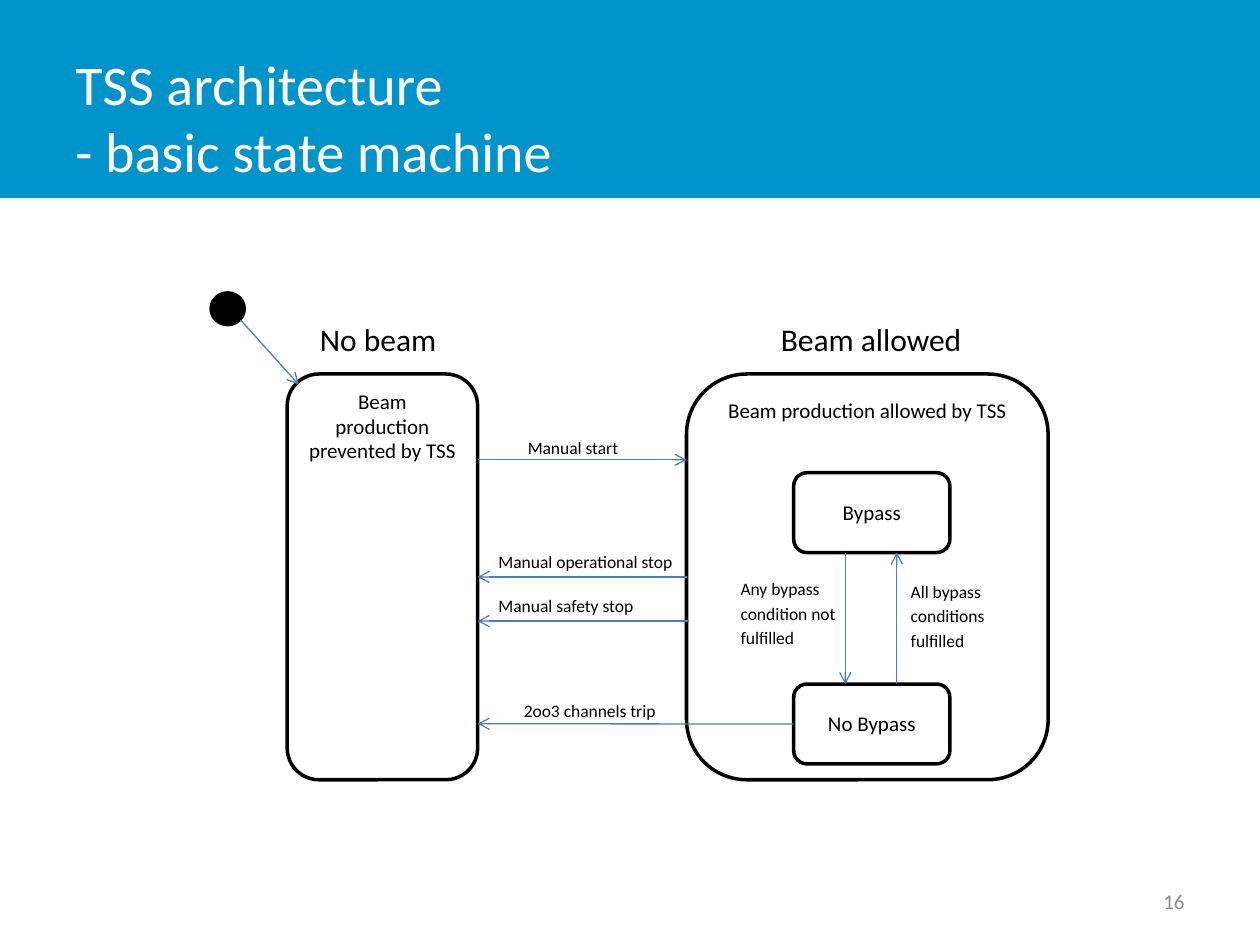
"""Build the TSS state machine slide."""
from lxml import etree
from pptx import Presentation
from pptx import util as u
from pptx.dml.color import RGBColor
from pptx.enum import shapes, text
from pptx.oxml.ns import qn

cm = u.Cm
hue = RGBColor.from_string
kind = shapes.MSO_SHAPE
mid = text.MSO_ANCHOR.MIDDLE
top = text.MSO_ANCHOR.TOP
left = text.PP_ALIGN.LEFT
center = text.PP_ALIGN.CENTER


def write(shape, words, size, color="000000", align=left, anchor=top, lead=None):
    frame = shape.text_frame
    frame.text = words
    frame.vertical_anchor = anchor
    para = frame.paragraphs[0]
    para.alignment = align
    if lead:
        para.line_spacing = u.Pt(lead)
        para.space_after = u.Pt(12)
    for run in para.runs:
        run.font.name = "Calibri"
        run.font.size = u.Pt(size)
        run.font.color.rgb = hue(color)


def draw(form, place, fill=None):
    shape = slide.shapes.add_shape(form, *map(cm, place))
    shape.shadow.inherit = False
    if fill:
        shape.fill.solid()
        shape.fill.fore_color.rgb = hue(fill)
        shape.line.fill.background()
    else:
        shape.fill.background()
        shape.line.color.rgb = hue("000000")
        shape.line.width = u.Pt(2)
    return shape


deck = Presentation()
deck.slide_width, deck.slide_height = cm(25.4), cm(19.05)
slide = deck.slides.add_slide(deck.slide_layouts[6])

draw(kind.RECTANGLE, (0, 0, 25.4, 3.99), "0094CA")
title = slide.shapes.add_textbox(cm(1.27), cm(0.76), cm(19.84), cm(3.18))
title.text_frame.word_wrap = True
write(title, "TSS architecture\v- basic state machine", 32, "FFFFFF", anchor=mid)
page = slide.shapes.add_textbox(cm(18.21), cm(17.65), cm(5.92), cm(1.02))
page.text_frame.word_wrap = True
write(page, "16", 12, "8C8C8C", text.PP_ALIGN.RIGHT, mid)

states = {}
for name, words, place, anchor in (
    ("stop", "Beam production prevented by TSS", (5.79, 7.54, 3.84, 8.18), top),
    ("allow", "Beam production allowed by TSS", (13.84, 7.54, 7.29, 8.18), top),
    ("pass", "Bypass", (16, 9.53, 3.15, 1.61), mid),
    ("none", "No Bypass", (16, 13.79, 3.15, 1.61), mid),
):
    states[name] = draw(kind.ROUNDED_RECTANGLE, place)
    write(states[name], words, 12, align=center, anchor=anchor, lead=14)

draw(kind.OVAL, (4.22, 5.87, 0.74, 0.71), "000000")

for ends, start, end in (
    ((4.85, 6.45, 6.02, 7.75), None, None),
    ((9.63, 9.27, 13.84, 9.27), None, None),
    ((13.84, 11.63, 9.63, 11.63), ("allow", 1), ("stop", 3)),
    ((13.89, 12.52, 9.63, 12.52), None, None),
    ((16, 14.59, 9.63, 14.59), ("none", 1), None),
    ((17.04, 11.14, 17.04, 13.79), None, None),
    ((18.08, 13.79, 18.08, 11.14), None, None),
):
    line = slide.shapes.add_connector(shapes.MSO_CONNECTOR.STRAIGHT, *map(cm, ends))
    if start:
        line.begin_connect(states[start[0]], start[1])
    if end:
        line.end_connect(states[end[0]], end[1])
    line.line.color.rgb = hue("4B7EBC")
    line.line.width = u.Pt(0.75)
    tip = etree.SubElement(line.line._get_or_add_ln(), qn("a:tailEnd"))
    tip.set("type", "arrow")
    etree.SubElement(line._element.spPr, qn("a:effectLst"))

for words, place in (
    ("Manual start", (10.39, 8.61, 3.02, 0.91)),
    ("Manual operational stop", (9.8, 10.92, 4.7, 0.91)),
    ("Manual safety stop", (9.8, 11.81, 4.7, 0.91)),
    ("2oo3 channels trip", (10.31, 13.92, 3.78, 0.91)),
    ("Any bypass condition not fulfilled", (14.68, 11.46, 3.02, 1.91)),
    ("All bypass conditions fulfilled", (18.11, 11.51, 3.02, 1.91)),
):
    label = slide.shapes.add_textbox(*map(cm, place))
    label.text_frame.word_wrap = True
    write(label, words, 10, lead=14)

for words, x, wide in (("No beam", 6.2, 2.9), ("Beam allowed", 15.49, 4.19)):
    head = slide.shapes.add_textbox(cm(x), cm(6.32), cm(wide), cm(1.02))
    head.text_frame.word_wrap = False
    head.text_frame.auto_size = text.MSO_AUTO_SIZE.SHAPE_TO_FIT_TEXT
    write(head, words, 18)

deck.save("out.pptx")
